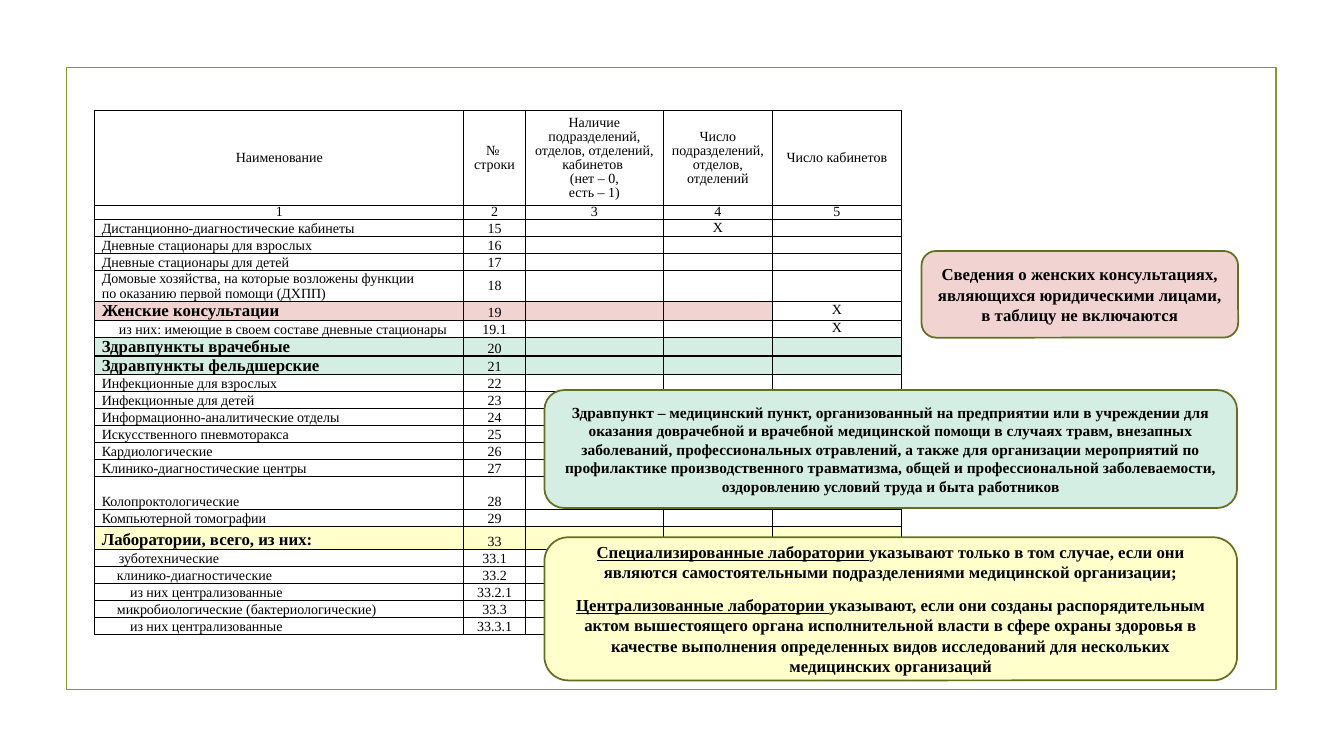
from lxml import etree
from pptx import Presentation
from pptx.dml.color import RGBColor
from pptx.enum.shapes import MSO_SHAPE
from pptx.enum.text import MSO_ANCHOR, PP_ALIGN
from pptx.oxml.ns import qn
from pptx.util import Inches, Pt

RECTANGLE, ROUNDED = MSO_SHAPE.RECTANGLE, MSO_SHAPE.ROUNDED_RECTANGLE
TOP, MIDDLE, BOTTOM = MSO_ANCHOR.TOP, MSO_ANCHOR.MIDDLE, MSO_ANCHOR.BOTTOM
LEFT, CENTER = PP_ALIGN.LEFT, PP_ALIGN.CENTER

FONT = "Times New Roman"
BLACK, FRAME_GREEN, NOTE_GREEN = "000000", "83992A", "61711F"
PINK, MINT, YELLOW = "F1D4D2", "D4EEE3", "FFFFCC"

COLUMN_WIDTHS = [3.66, 0.61, 1.37, 1.08, 1.28]
ROW_HEIGHT = 0.13
SPECIAL_HEIGHTS = {0: 0.94, 16: 0.32, 18: 0.23}
HEADINGS = [
    ["Наименование", "№ \vстроки",
     "Наличие подразделений,\vотделов, отделений, кабинетов \v(нет – 0,\vесть – 1)",
     "Число\vподразделений,\vотделов,\vотделений", "Число кабинетов"],
    ["1", "2", "3", "4", "5"],
]
# name, line number, column 4, column 5, left indent
UNITS = [
    ("Дистанционно-диагностические кабинеты", "15", "Х", "", 0),
    ("Дневные стационары для взрослых", "16", "", "", 0),
    ("Дневные стационары для детей", "17", "", "", 0),
    ("Домовые хозяйства, на которые возложены функции\vпо оказанию первой помощи (ДХПП)",
     "18", "", "", 0),
    ("Женские консультации", "19", "", "Х", 0),
    ("из них: имеющие в своем составе дневные стационары", "19.1", "", "Х", 0.17),
    ("Здравпункты врачебные", "20", "", "", 0),
    ("Здравпункты фельдшерские", "21", "", "", 0),
    ("Инфекционные для взрослых", "22", "", "", 0),
    ("Инфекционные для детей", "23", "", "", 0),
    ("Информационно-аналитические отделы", "24", "", "", 0),
    ("Искусcтвенного пневмоторакса", "25", "", "", 0),
    ("Кардиологические", "26", "", "", 0),
    ("Клинико-диагностические центры", "27", "", "", 0),
    ("Колопроктологические", "28", "", "", 0),
    ("Компьютерной томографии", "29", "", "", 0),
    ("Лаборатории, всего, из них:", "33", "", "", 0),
    ("зуботехнические", "33.1", "", "", 0.17),
    ("клинико-диагностические", "33.2", "", "", 0.15),
    ("из них централизованные", "33.2.1", "", "", 0.28),
    ("микробиологические (бактериологические)", "33.3", "", "", 0.15),
    ("из них централизованные", "33.3.1", "", "", 0.28),
]
# line number: fill, number of filled columns
HIGHLIGHTS = {"19": (PINK, 4), "20": (MINT, 5), "21": (MINT, 5), "33": (YELLOW, 5)}

# position, fill, text size, paragraphs of (underlined start, remaining text)
NOTES = [
    ((9.14, 2.49, 3.14, 0.86), PINK, 12, [
        ("", "Сведения о женских консультациях, являющихся юридическими лицами, "
             "в таблицу не включаются")]),
    ((5.4, 3.87, 6.87, 1.17), MINT, 11, [
        ("", "Здравпункт – медицинский пункт, организованный на предприятии или в "
             "учреждении для оказания доврачебной и врачебной медицинской помощи в случаях "
             "травм, внезапных заболеваний, профессиональных отравлений, а также для "
             "организации мероприятий по профилактике производственного травматизма, общей "
             "и профессиональной заболеваемости, оздоровлению условий труда и быта "
             "работников")]),
    ((5.4, 5.33, 6.87, 1.42), YELLOW, 12, [
        ("Специализированные лаборатории ",
         "указывают только в том случае, если они являются самостоятельными "
         "подразделениями медицинской организации;"),
        ("Централизованные лаборатории ",
         "указывают, если они созданы распорядительным актом вышестоящего органа "
         "исполнительной власти в сфере охраны здоровья в качестве выполнения "
         "определенных видов исследований для нескольких медицинских организаций")]),
]


def color(value):
    return RGBColor.from_string(value)


def paint(fill, value):
    if value:
        fill.solid()
        fill.fore_color.rgb = color(value)
    else:
        fill.background()


def style_run(run, size, bold=False, underline=False):
    run.font.name = FONT
    run.font.size = Pt(size)
    run.font.bold = bold
    run.font.underline = underline
    run.font.color.rgb = color(BLACK)


def add_box(slide, kind, position, fill, line):
    shape = slide.shapes.add_shape(kind, *map(Inches, position))
    shape.shadow.inherit = False
    paint(shape.fill, fill)
    shape.line.color.rgb = color(line)
    shape.line.width = Pt(1.25)
    return shape


def add_borders(cell):
    properties = cell._tc.get_or_add_tcPr()
    for side in ("a:lnL", "a:lnR", "a:lnT", "a:lnB"):
        border = etree.SubElement(properties, qn(side), w=str(Pt(1)))
        solid = etree.SubElement(border, qn("a:solidFill"))
        etree.SubElement(solid, qn("a:srgbClr"), val=BLACK)


def fill_cell(cell, text, align, anchor, fill=None, size=10, bold=False,
              indent=0, exact=False):
    cell.margin_left = cell.margin_right = Inches(0.07)
    cell.margin_top = cell.margin_bottom = 0
    cell.vertical_anchor = anchor
    add_borders(cell)
    paint(cell.fill, fill)
    cell.text_frame.text = text
    paragraph = cell.text_frame.paragraphs[0]
    paragraph.alignment = align
    if exact:
        paragraph.line_spacing = Pt(10)
    if indent:
        paragraph._p.get_or_add_pPr().set("marL", str(Inches(indent)))
    for run in paragraph.runs:
        style_run(run, size, bold)
    if not text:
        # keeps empty cells as low as the 10 pt text rows
        etree.SubElement(paragraph._p, qn("a:endParaRPr"), sz="1000")


def add_units_table(slide):
    row_count = len(HEADINGS) + len(UNITS)
    heights = [SPECIAL_HEIGHTS.get(row, ROW_HEIGHT) for row in range(row_count)]
    frame = slide.shapes.add_table(
        row_count, len(COLUMN_WIDTHS), Inches(0.94), Inches(1.1),
        Inches(sum(COLUMN_WIDTHS)), Inches(sum(heights)))
    table = frame.table
    table.first_row = table.horz_banding = False
    for column, width in zip(table.columns, COLUMN_WIDTHS):
        column.width = Inches(width)
    for row, height in zip(table.rows, heights):
        row.height = Inches(height)

    for row, headings in enumerate(HEADINGS):
        for column, text in enumerate(headings):
            anchor = MIDDLE if row == 0 else BOTTOM if column < 3 else TOP
            fill_cell(table.cell(row, column), text, CENTER, anchor, exact=True)

    for row, (name, number, departments, rooms, indent) in enumerate(UNITS, len(HEADINGS)):
        fill, filled = HIGHLIGHTS.get(number, (None, 0))
        fills = [fill if column < filled else None for column in range(5)]
        fill_cell(table.cell(row, 0), name, LEFT, BOTTOM, fills[0],
                  size=12 if fill else 10, bold=bool(fill), indent=indent,
                  exact=number == "33")
        fill_cell(table.cell(row, 1), number, CENTER,
                  MIDDLE if number == "18" else BOTTOM, fills[1])
        for column, text in enumerate(("", departments, rooms), 2):
            fill_cell(table.cell(row, column), text, CENTER, TOP, fills[column])


def add_note(slide, position, fill, size, paragraphs):
    text_frame = add_box(slide, ROUNDED, position, fill, NOTE_GREEN).text_frame
    text_frame.word_wrap = True
    text_frame.vertical_anchor = MIDDLE
    for index, (term, explanation) in enumerate(paragraphs):
        paragraph = text_frame.add_paragraph() if index else text_frame.paragraphs[0]
        paragraph.alignment = CENTER
        if index:
            paragraph.space_before = Pt(9)
        for text, underline in ((term, True), (explanation, False)):
            if text:
                run = paragraph.add_run()
                run.text = text
                style_run(run, size, bold=True, underline=underline)


def main():
    presentation = Presentation()
    presentation.slide_width = Inches(13.33)
    presentation.slide_height = Inches(7.5)
    slide = presentation.slides.add_slide(presentation.slide_layouts[6])
    add_box(slide, RECTANGLE, (0.66, 0.67, 12, 6.17), None, FRAME_GREEN)
    add_units_table(slide)
    for note in NOTES:
        add_note(slide, *note)
    presentation.save("out.pptx")


if __name__ == "__main__":
    main()
